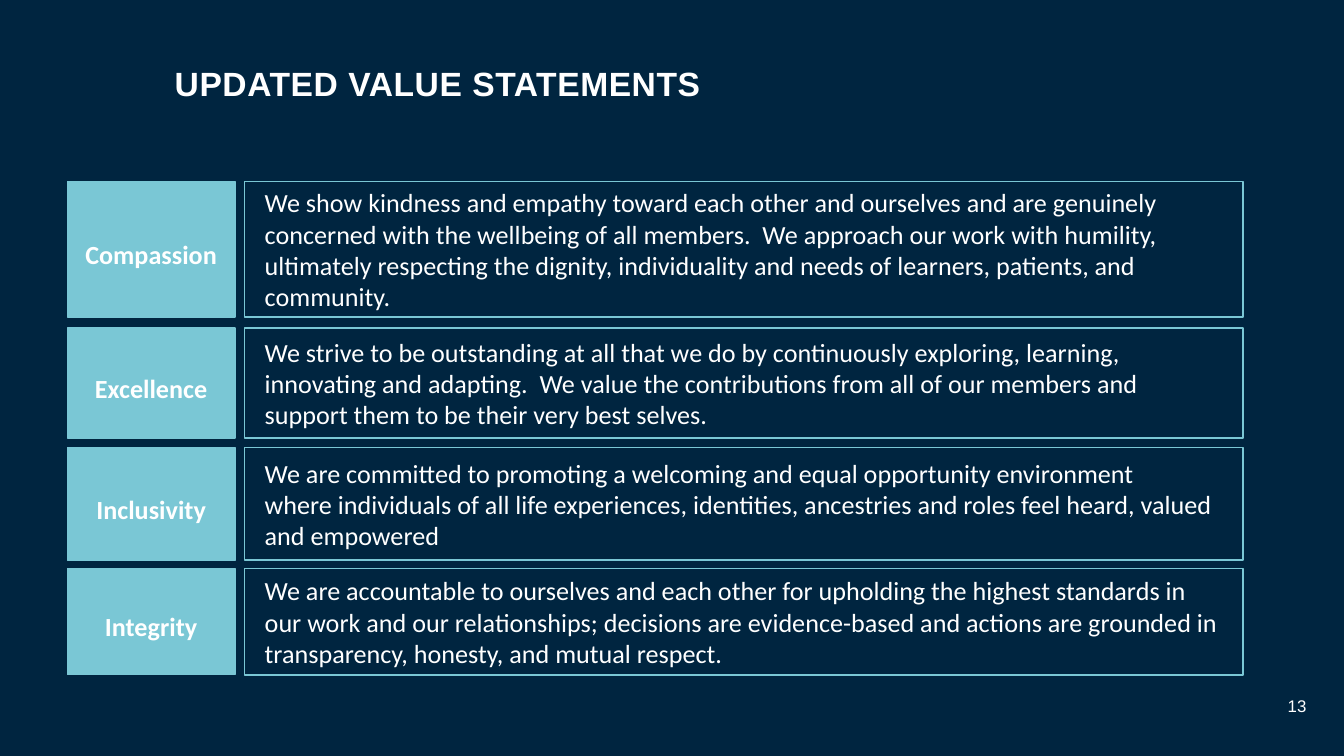
"""Build the slide of updated value statements."""
import pptx
import pptx.util
import pptx.dml.color
import pptx.enum.shapes
import pptx.enum.text

Inches, Pt = pptx.util.Inches, pptx.util.Pt
RGBColor = pptx.dml.color.RGBColor
ALIGN = pptx.enum.text.PP_ALIGN
ANCHOR = pptx.enum.text.MSO_ANCHOR
RECT = pptx.enum.shapes.MSO_SHAPE.RECTANGLE

NAVY = RGBColor(0x00, 0x25, 0x40)
TEAL = RGBColor(0x7A, 0xC7, 0xD5)
WHITE = RGBColor(0xFF, 0xFF, 0xFF)

TITLE = "UPDATED VALUE STATEMENTS"
NUMBER = "13"
HARD = chr(160)
VALUES = [
    ("Compassion", 1.35, 1.01,
     "We show kindness and empathy toward each other and ourselves and are "
     "genuinely concerned with the wellbeing of all members.  We approach our "
     "work with humility, ultimately respecting the dignity, individuality and "
     "needs of learners, patients, and community."),
    ("Excellence", 2.44, 0.82,
     "We strive to be outstanding at all that we do by continuously exploring, "
     "learning, innovating and adapting.  We value the contributions from all "
     "of our members and support them to be their very best selves."),
    ("Inclusivity", 3.33, 0.84,
     "We are committed to promoting a welcoming and equal opportunity "
     f"environment where{HARD}individuals of all life experiences, identities, "
     "ancestries and roles feel heard, valued and empowered"),
    ("Integrity", 4.23, 0.79,
     "We are accountable to ourselves and each other for upholding the highest "
     "standards in our work and our relationships; decisions are evidence-based "
     "and actions are grounded in transparency, honesty, and mutual respect."),
]
NAME_X, NAME_W = 0.5, 1.25
TEXT_X, TEXT_W = 1.82, 7.43


def write(shape, text, size, face, bold=False, align=ALIGN.LEFT,
          anchor=ANCHOR.MIDDLE, pad=(0, 0)):
    frame = shape.text_frame
    frame.word_wrap = True
    frame.vertical_anchor = anchor
    frame.margin_left = frame.margin_right = Inches(pad[0])
    frame.margin_top = frame.margin_bottom = Inches(pad[1])
    para = frame.paragraphs[0]
    para.text = text
    para.alignment = align
    font = para.font
    font.size, font.name, font.bold = Pt(size), face, bold
    font.color.rgb = WHITE
    return para


def add_text(slide, box, *args, **style):
    shape = slide.shapes.add_textbox(*map(Inches, box))
    return write(shape, *args, **style)


def add_box(slide, box, width, filled):
    shape = slide.shapes.add_shape(RECT, *map(Inches, box))
    shape.shadow.inherit = False
    if filled:
        shape.fill.solid()
        shape.fill.fore_color.rgb = TEAL
    else:
        shape.fill.background()
    shape.line.color.rgb = TEAL
    shape.line.width = Pt(width)
    return shape


def main():
    deck = pptx.Presentation()
    deck.slide_width = Inches(10)
    deck.slide_height = deck.slide_width * 9 // 16
    slide = deck.slides.add_slide(deck.slide_layouts[6])
    slide.background.fill.solid()
    slide.background.fill.fore_color.rgb = NAVY

    add_text(slide, (9.39, 5.18, 0.33, 0.21), NUMBER, 9, "Arial",
             align=ALIGN.RIGHT, anchor=ANCHOR.TOP)
    title = add_text(slide, (1.3, 0.28, 7.85, 0.68), TITLE, 18, "Arial", bold=True)
    title.line_spacing = Pt(21)
    title.runs[0].font._element.set("spc", "30")

    for name, top, high, text in VALUES:
        label = add_box(slide, (NAME_X, top, NAME_W, high), 0.75, True)
        para = write(label, name, 14, "Calibri", bold=True, align=ALIGN.CENTER)
        para.line_spacing = 1.3
        body = add_box(slide, (TEXT_X, top, TEXT_W, high), 1, False)
        write(body, text, 14, "Calibri", pad=(0.15, 0.07))

    deck.save("out.pptx")


if __name__ == "__main__":
    main()
